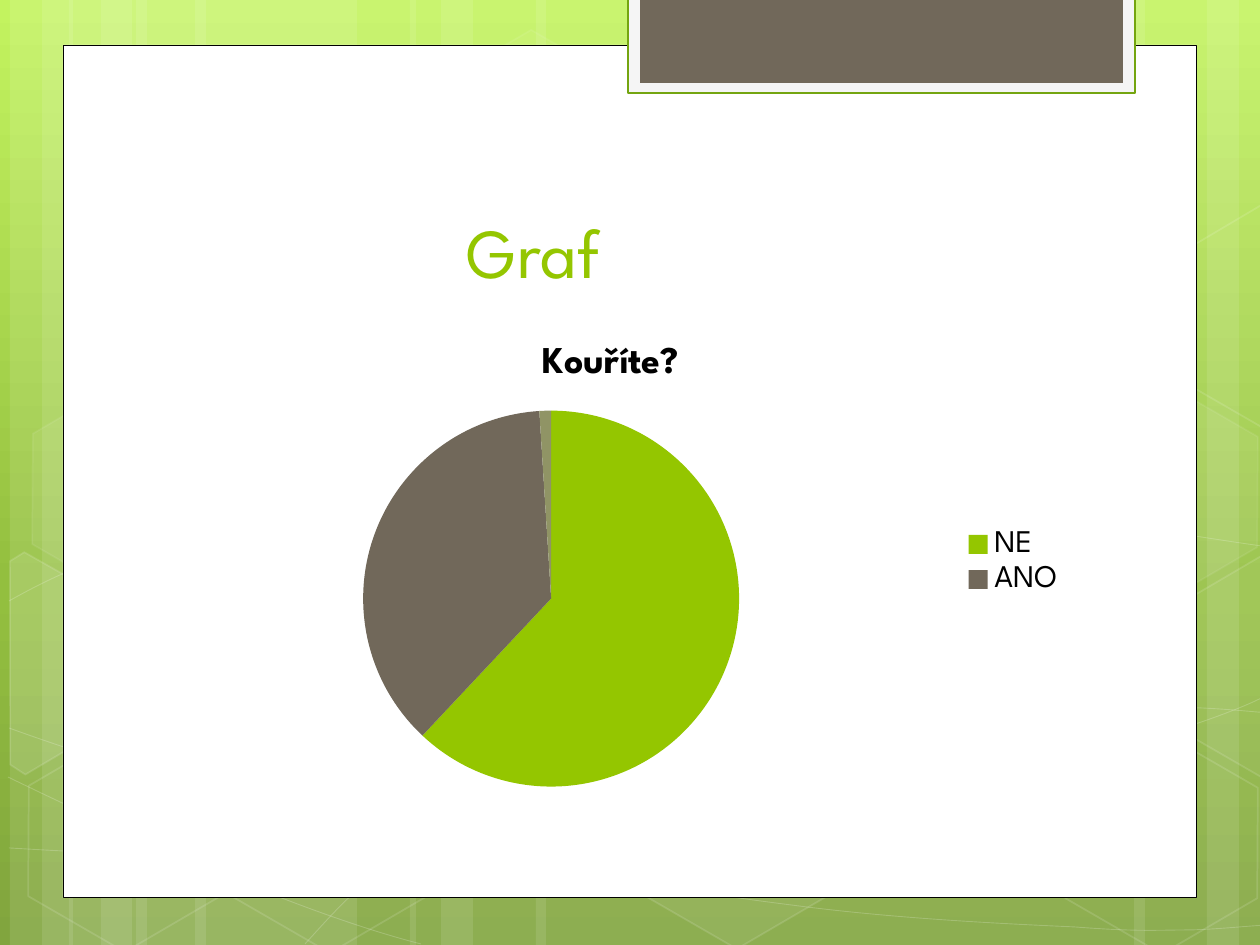
from copy import deepcopy
from math import cos, radians, sin
from lxml.etree import SubElement
from pptx import Presentation
from pptx.chart.data import CategoryChartData
from pptx.dml.color import RGBColor
from pptx.enum.chart import XL_CHART_TYPE, XL_LEGEND_POSITION
from pptx.enum.shapes import MSO_SHAPE
from pptx.enum.text import MSO_ANCHOR, MSO_AUTO_SIZE, PP_ALIGN
from pptx.oxml import parse_xml
from pptx.oxml.ns import nsdecls, qn
from pptx.util import Pt

PX = 914400 / 126
FONT = "League Spartan"
TILT = 30
WHITE = RGBColor(0xFF, 0xFF, 0xFF)
BLACK = RGBColor(0, 0, 0)
SMOKE = RGBColor(0xF5, 0xF5, 0xF5)
LEAF = RGBColor(0x74, 0xA5, 0x10)
LIME = RGBColor(0x94, 0xC6, 0x00)
BROWN = RGBColor(0x71, 0x68, 0x5A)
FLAME = RGBColor(0xFF, 0x67, 0x00)
OLIVE = RGBColor(0x90, 0x94, 0x65)
SKY = [(0, RGBColor(0xC3, 0xF3, 0x5F)), (62, RGBColor(0x93, 0xBF, 0x3F)),
       (100, RGBColor(0x81, 0xA5, 0x3E))]

BANDS = [(136, 221), (10, 63), (42, 105), (195, 221), (69, 63), (101, 105),
         (924, 221), (1207, 63), (1134, 105), (536, 388), (410, 63), (441, 105)]
WAVES = [
    [(9, 848), (77, 852), (145, 856), (239, 854), (334, 853), (451, 851), (577, 838),
     (703, 825), (882, 801), (998, 777), (1113, 753), (1231, 716), (1269, 694)],
    [(9, 601), (45, 581), (82, 562), (152, 543), (224, 524), (326, 496), (437, 488),
     (549, 479), (685, 478), (824, 488), (963, 497), (1193, 537), (1269, 547)],
    [(8, 777), (152, 847), (311, 916), (421, 944)],
    [(9, 728), (48, 742), (88, 756), (161, 776), (234, 795), (344, 827), (450, 848),
     (554, 869), (687, 892), (791, 905), (896, 919), (1008, 924), (1075, 927),
     (1140, 932), (1158, 930), (1191, 930), (1223, 929), (1246, 926), (1269, 925)],
    [(305, 944), (328, 919), (350, 893), (381, 871), (411, 848), (454, 823), (489, 805),
     (524, 788), (546, 780), (592, 767), (638, 755), (722, 737), (766, 728),
     (811, 719), (818, 719), (857, 717), (896, 713), (958, 709), (1000, 708),
     (1045, 707), (1116, 708), (1116, 708), (1116, 708), (1201, 708), (1201, 708),
     (1223, 709), (1245, 711), (1256, 712), (1268, 713), (1264, 712), (1268, 713)],
]
CELLS = [(421, 45, 4, 8), (626, 742, 6, 12), (14, 745, 0, 12), (18, 393, 7, 8),
         (219, 746, 0, 12), (949, 571, 10, 12), (1051, 747, 0, 12), (1051, 396, 7, 8)]
SHARDS = [
    ([(10, 561), (24, 552), (121, 607), (120, 718), (25, 774), (10, 765)], (45, 674), 10),
    ([(1167, 611), (1261, 556), (1271, 562), (1271, 772), (1263, 777), (1167, 722)],
     (1241, 655), 4),
    ([(1167, 261), (1261, 205), (1273, 212), (1271, 422), (1263, 427), (1167, 372)],
     (1241, 304), 0),
]


def emu(*sides):
    return [round(side * PX) for side in sides]


def fade(holder, percent):
    color = holder.find(qn("a:solidFill") + "/" + qn("a:srgbClr"))
    SubElement(color, qn("a:alpha")).set("val", str(percent * 1000))


def paint(shape, fill=None, line=None, width=1.0):
    shape.shadow.inherit = False
    if fill is None:
        shape.fill.background()
    else:
        shape.fill.solid()
        shape.fill.fore_color.rgb = fill
    if line is None:
        shape.line.fill.background()
    else:
        shape.line.color.rgb = line
        shape.line.width = Pt(width)


def glaze(shape, fill=0, line=0, width=1.0):
    paint(shape, WHITE if fill else None, WHITE if line else None, width)
    frame = shape.element.spPr
    if fill:
        fade(frame, fill)
    if line:
        fade(frame.find(qn("a:ln")), line)


def trace(shapes, box, points, closed):
    left, top = box[:2]
    points = [(left + x, top + y) for x, y in points]
    pen = shapes.build_freeform(*points[0], scale=PX)
    pen.add_line_segments(points[1:], close=closed)
    return pen.convert_to_shape()


def bend(shape):
    track = shape.element.find(".//" + qn("a:path"))
    legs = track.findall(qn("a:lnTo"))
    for i in range(0, len(legs), 3):
        curve = SubElement(track, qn("a:cubicBezTo"))
        for leg in legs[i:i + 3]:
            curve.append(leg[0])
            track.remove(leg)


def turn(points, pivot, angle):
    c, s = cos(radians(angle)), sin(radians(angle))
    px, py = pivot
    return [(px + (x - px) * c - (y - py) * s, py + (x - px) * s + (y - py) * c)
            for x, y in points]


def add_sky(slide):
    fill = slide.background.fill
    fill.gradient()
    fill.gradient_angle = 270
    stops = slide.element.find(".//" + qn("a:gsLst"))
    stops.insert(1, deepcopy(stops[0]))
    for stop, (place, color) in zip(fill.gradient_stops, SKY):
        stop.position = place / 100
        stop.color.rgb = color


def add_decor(slide, box):
    left, top, width, height = box
    shapes = slide.shapes.add_group_shape().shapes
    for x, wide in BANDS:
        band = shapes.add_shape(MSO_SHAPE.RECTANGLE, *emu(left + x, top, wide, height))
        glaze(band, 10)
    for knots in WAVES:
        wave = trace(shapes, box, knots, False)
        bend(wave)
        glaze(wave, line=20, width=0.5)
    for x, y, fill, line in CELLS:
        cell = shapes.add_shape(MSO_SHAPE.HEXAGON, *emu(left + x, top + y, 221, 192))
        cell.adjustments[0] = 0.285
        cell.rotation = TILT
        glaze(cell, fill, line)
    for points, pivot, fill in SHARDS:
        shard = trace(shapes, box, turn(points, pivot, -TILT), True)
        shard.rotation = TILT
        glaze(shard, fill, 12)


def add_panel(slide, box):
    left, top, width, height = box
    plates = [((0, 0, width, height), WHITE, BLACK, 0.5),
              ((565, -48, 507, 96), SMOKE, LEAF, 1.25),
              ((577, -48, 483, 86), BROWN, None, 0)]
    for (x, y, wide, high), fill, line, weight in plates:
        plate = slide.shapes.add_shape(MSO_SHAPE.RECTANGLE,
                                       *emu(left + x, top + y, wide, high))
        paint(plate, fill, line, weight)


def move_back(slide):
    layer = slide.slide_layout.shapes.element
    for shape in list(slide.shapes):
        if not shape.is_placeholder:
            layer.append(shape.element)
            for mark in shape.element.iter(qn("p:cNvPr")):
                mark.set("id", str(int(mark.get("id")) + 100))


def add_title(slide, box):
    title = slide.shapes.title
    title.left, title.top, title.width, title.height = emu(*box)
    frame = title.text_frame
    frame.text = "Graf"
    frame.auto_size = MSO_AUTO_SIZE.NONE
    frame.vertical_anchor = MSO_ANCHOR.BOTTOM
    frame.margin_left = emu(323)[0]
    line = frame.paragraphs[0]
    line.alignment = PP_ALIGN.LEFT
    font = line.runs[0].font
    font.name, font.size, font.color.rgb = FONT, Pt(40), LIME


def add_pie(slide, box):
    data = CategoryChartData()
    data.categories = ["NE", "ANO", "", ""]
    data.add_series("Series 1", (62, 37, 0, 1))
    chart = slide.shapes.add_chart(XL_CHART_TYPE.PIE, *emu(*box), data).chart
    font = chart.font
    font.name, font.size, font.color.rgb = FONT, Pt(18), BLACK

    chart.has_title = True
    frame = chart.chart_title.text_frame
    frame.text = "Kouříte?"
    font = frame.paragraphs[0].runs[0].font
    font.name, font.size, font.bold, font.color.rgb = FONT, Pt(21.6), True, BLACK

    chart.has_legend = True
    chart.legend.position = XL_LEGEND_POSITION.RIGHT
    chart.legend.include_in_layout = False
    legend = chart.element.find(".//" + qn("c:legend"))
    for index in (2, 3):
        legend.insert(index - 1, parse_xml(
            f'<c:legendEntry {nsdecls("c")}><c:idx val="{index}"/>'
            '<c:delete val="1"/></c:legendEntry>'))

    plot = chart.plots[0]
    plot.vary_by_categories = True
    for index, color in enumerate((LIME, BROWN, FLAME, OLIVE)):
        fill = plot.series[0].points[index].format.fill
        fill.solid()
        fill.fore_color.rgb = color


def main():
    deck = Presentation()
    deck.slide_width, deck.slide_height = emu(1260, 945)
    slide = deck.slides.add_slide(deck.slide_layouts[5])
    add_sky(slide)
    add_decor(slide, (0, 0, 1260, 945))
    add_panel(slide, (63, 45, 1134, 853))
    move_back(slide)
    add_title(slide, (144, 141, 968, 158))
    add_pie(slide, (144, 320, 934, 484))
    deck.save("out.pptx")


if __name__ == "__main__":
    main()
